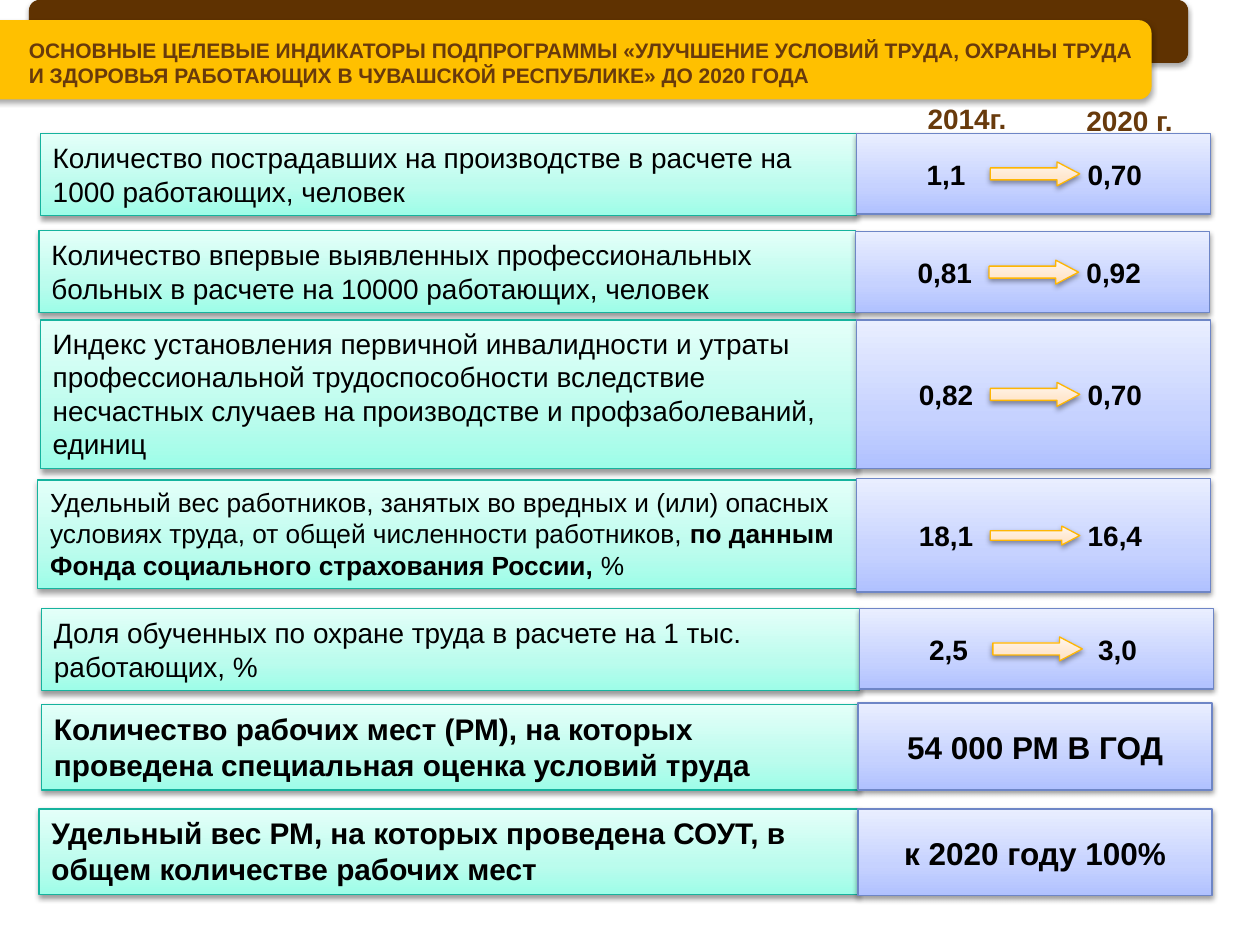
"""Build the slide of target indicators for the labour safety subprogramme."""
import pptx
import pptx.dml.color
import pptx.enum.shapes
import pptx.enum.text
import pptx.oxml
import pptx.oxml.ns
import pptx.util
from dataclasses import dataclass

Inches = pptx.util.Inches
SHAPES = pptx.enum.shapes.MSO_SHAPE
ALIGN = pptx.enum.text.PP_ALIGN
ANCHOR = pptx.enum.text.MSO_ANCHOR
FIT = pptx.enum.text.MSO_AUTO_SIZE.SHAPE_TO_FIT_TEXT
STOPS = (0, 35, 100)


@dataclass(frozen=True)
class Theme:
    font: str = "Arial"
    brown: str = "5F3201"
    gold: str = "FFC000"
    heading: str = "683A0C"
    text: str = "000000"
    label: tuple = (("9DFDE8", "BBFCED", "E4FFF9"), "16B39E")
    value: tuple = (("B0C1FF", "C6D2FF", "E9EEFF"), "6E86C6")
    arrow: tuple = (("FFDFBC", "FFE8D0", "FFF6ED"), "FEB604")
    title_size: int = 12
    body_size: int = 16
    small_size: int = 15
    strong_size: int = 17
    result_size: int = 18


@dataclass
class Row:
    left: float
    top: float
    width: float
    height: float
    value_top: float
    value_height: float
    runs: list
    value: str
    size: int = Theme.body_size
    value_size: int = Theme.body_size
    anchor: ANCHOR = ANCHOR.MIDDLE
    arrow_height: float = 0.19


class SlideBuilder:
    def __init__(self, slide, theme):
        self.slide = slide
        self.theme = theme

    def set_text(self, shape, runs, size, color, align=ALIGN.LEFT, tabs=(), **frame_format):
        frame = shape.text_frame
        for name, value in {"word_wrap": True, **frame_format}.items():
            setattr(frame, name, value)
        paragraph = frame.paragraphs[0]
        paragraph.alignment = align
        if tabs:
            stops = pptx.oxml.parse_xml(f"<a:tabLst {pptx.oxml.ns.nsdecls('a')}>" + "".join(
                f'<a:tab pos="{Inches(tab)}" algn="ctr"/>' for tab in tabs) + "</a:tabLst>")
            paragraph._p.get_or_add_pPr().append(stops)
        for text, bold in runs:
            run = paragraph.add_run()
            run.text = text
            run_format = {"name": self.theme.font, "size": pptx.util.Pt(size), "bold": bold}
            for name, value in run_format.items():
                setattr(run.font, name, value)
            run.font.color.rgb = pptx.dml.color.RGBColor.from_string(color)

    def shadow(self, shape, distance, opacity):
        shape.shadow.inherit = False
        effects = shape._element.spPr.find(pptx.oxml.ns.qn("a:effectLst"))
        effects.append(pptx.oxml.parse_xml(
            f'<a:outerShdw {pptx.oxml.ns.nsdecls("a")} blurRad="{pptx.util.Pt(3.1)}" '
            f'dist="{pptx.util.Pt(distance)}" dir="5400000" rotWithShape="0">'
            f'<a:srgbClr val="000000"><a:alpha val="{opacity * 1000}"/></a:srgbClr></a:outerShdw>'))

    def bar(self, left, top, width, height, color):
        box = map(Inches, (left, top, width, height))
        shape = self.slide.shapes.add_shape(SHAPES.ROUNDED_RECTANGLE, *box)
        shape.fill.solid()
        shape.fill.fore_color.rgb = pptx.dml.color.RGBColor.from_string(color)
        shape.line.fill.background()
        self.shadow(shape, 1.8, 35)

    def panel(self, kind, left, top, width, height, style):
        colors, line_color = style
        shape = self.slide.shapes.add_shape(kind, *map(Inches, (left, top, width, height)))
        shape.fill.gradient()
        shape.fill.gradient_angle = 90
        stops = shape._element.spPr.find(".//" + pptx.oxml.ns.qn("a:gsLst"))
        stops.getparent().replace(stops, pptx.oxml.parse_xml(
            f"<a:gsLst {pptx.oxml.ns.nsdecls('a')}>" + "".join(
                f'<a:gs pos="{stop * 1000}"><a:srgbClr val="{color}"/></a:gs>'
                for stop, color in zip(STOPS, colors)) + "</a:gsLst>"))
        shape.line.color.rgb = pptx.dml.color.RGBColor.from_string(line_color)
        shape.line.width = pptx.util.Pt(0.75)
        self.shadow(shape, 1.6, 38)
        return shape

    def heading(self, left, top, width, height, text, size, align=ALIGN.LEFT, **frame_format):
        box = self.slide.shapes.add_textbox(*map(Inches, (left, top, width, height)))
        self.set_text(box, [(text, True)], size, self.theme.heading, align, **frame_format)

    def indicator(self, row):
        theme = self.theme
        label = self.panel(SHAPES.RECTANGLE, row.left, row.top, row.width, row.height, theme.label)
        self.set_text(label, row.runs, row.size, theme.text,
                      vertical_anchor=row.anchor, auto_size=FIT)
        value_left = row.left + row.width
        value = self.panel(SHAPES.RECTANGLE, value_left, row.value_top, 2.81,
                           row.value_height, theme.value)
        changing = "\t" in row.value
        self.set_text(value, [(row.value, True)], row.value_size, theme.text,
                      ALIGN.LEFT if changing else ALIGN.CENTER,
                      (0.61, 1.95) if changing else (), vertical_anchor=ANCHOR.MIDDLE)
        if changing:
            arrow_top = row.value_top + (row.value_height - row.arrow_height) / 2
            arrow = self.panel(SHAPES.RIGHT_ARROW, value_left + 1.06, arrow_top, 0.71,
                               row.arrow_height, theme.arrow)
            arrow.adjustments[1] = 0.95


ROWS = [
    Row(0.32, 1.06, 6.48, 0.65, 1.06, 0.64,
        [("Количество пострадавших на производстве в расчете на 1000 работающих, человек", False)],
        "\t1,1\t0,70"),
    Row(0.31, 1.83, 6.48, 0.65, 1.84, 0.64,
        [("Количество впервые выявленных профессиональных больных в расчете "
          "на 10000 работающих, человек", False)], "\t0,81\t0,92"),
    Row(0.32, 2.54, 6.48, 1.18, 2.54, 1.18,
        [("Индекс установления первичной инвалидности и утраты профессиональной "
          "трудоспособности вследствие несчастных случаев на производстве и "
          "профзаболеваний, единиц", False)], "\t0,82\t0,70", anchor=ANCHOR.TOP),
    Row(0.3, 3.81, 6.5, 0.86, 3.8, 0.9,
        [("Удельный вес работников, занятых во вредных и (или) опасных условиях труда, "
          "от общей численности работников, ", False),
         ("по данным Фонда социального страхования России, ", True), ("%", False)],
        "\t18,1\t16,4", Theme.small_size, anchor=ANCHOR.TOP, arrow_height=0.15),
    Row(0.33, 4.83, 6.49, 0.65, 4.83, 0.64,
        [("Доля обученных по охране труда в расчете на 1 тыс. работающих, %", False)],
        "\t2,5\t3,0"),
    Row(0.33, 5.59, 6.48, 0.68, 5.58, 0.69,
        [("Количество рабочих мест (РМ), на которых проведена специальная оценка "
          "условий труда", True)],
        "54 000 РМ В ГОД", Theme.strong_size, Theme.result_size, ANCHOR.TOP),
    Row(0.31, 6.42, 6.5, 0.68, 6.42, 0.69,
        [("Удельный вес РМ, на которых проведена СОУТ, в общем количестве рабочих мест", True)],
        "к 2020 году 100%", Theme.strong_size, Theme.result_size, ANCHOR.TOP),
]


def main():
    presentation = pptx.Presentation()
    presentation.slide_width = Inches(10)
    presentation.slide_height = Inches(7.5)
    theme = Theme()
    builder = SlideBuilder(presentation.slides.add_slide(presentation.slide_layouts[6]), theme)
    builder.bar(0.23, 0, 9.2, 0.5, theme.brown)
    builder.bar(-0.17, 0.16, 9.31, 0.63, theme.gold)
    builder.heading(0.13, 0.25, 8.99, 0.64,
                    "ОСНОВНЫЕ ЦЕЛЕВЫЕ ИНДИКАТОРЫ ПОДПРОГРАММЫ «УЛУЧШЕНИЕ УСЛОВИЙ ТРУДА, "
                    "ОХРАНЫ ТРУДА И ЗДОРОВЬЯ РАБОТАЮЩИХ В ЧУВАШСКОЙ РЕСПУБЛИКЕ» ДО 2020 ГОДА",
                    theme.title_size, margin_bottom=0)
    for row in ROWS:
        builder.indicator(row)
    for left, top, year in ((7.21, 0.76, "2014г."), (8.5, 0.77, "2020 г.")):
        builder.heading(left, top, 0.93, 0.37, year, theme.body_size, ALIGN.CENTER, auto_size=FIT)
    presentation.save("out.pptx")


if __name__ == "__main__":
    main()
